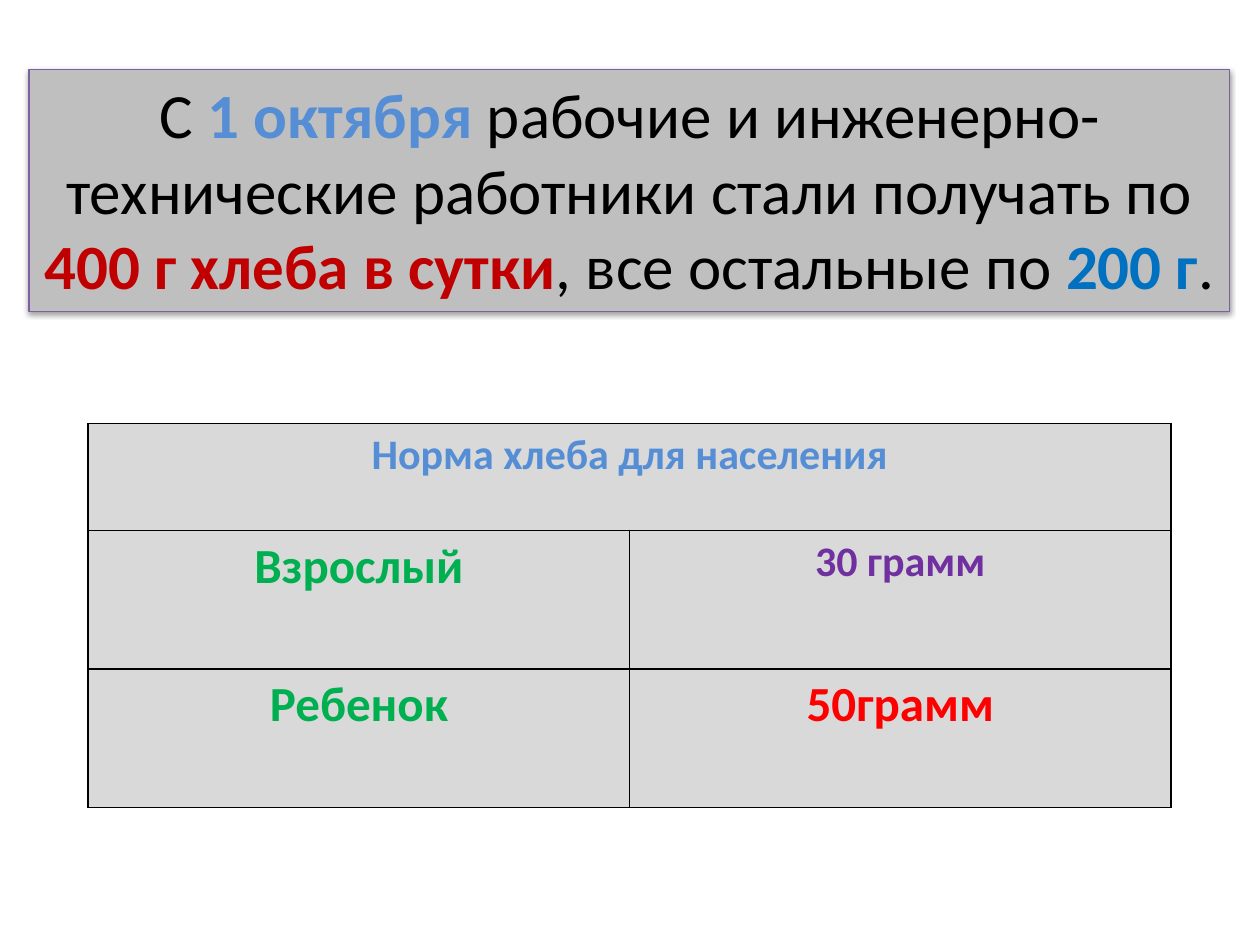
from lxml.etree import SubElement
from pptx import Presentation
from pptx.dml.color import RGBColor
from pptx.enum.shapes import MSO_SHAPE
from pptx.enum.text import MSO_ANCHOR, MSO_AUTO_SIZE, PP_ALIGN
from pptx.oxml import parse_xml
from pptx.oxml.ns import nsdecls, qn
from pptx.util import Pt

FONT = "Calibri"
COLORS = {
    "black": "000000", "panel": "BFBFBF", "panel_line": "7D60A0",
    "cell": "D9D9D9", "sky": "558ED5", "dark_red": "C00000",
    "blue": "0070C0", "green": "00B050", "purple": "7030A0", "red": "FF0000",
}

STATEMENT = [
    ("С ", "black", False),
    ("1 октября ", "sky", True),
    ("рабочие и инженерно-технические работники стали получать по ", "black", False),
    ("400 г хлеба в сутки", "dark_red", True),
    (", все остальные по ", "black", False),
    ("200 г", "blue", True),
    (".", "black", False),
]
STATEMENT_BOX = (16.56, 39.6, 686.16, 138.24)

RATIONS = [
    [("Норма хлеба для населения", 24, "sky"), None],
    [("Взрослый", 28, "green"), ("30 грамм", 24, "purple")],
    [("Ребенок", 28, "green"), ("50грамм", 28, "red")],
]
TABLE_LEFT, TABLE_TOP, COLUMN_WIDTH = 50.4, 241.9, 309.4
ROW_HEIGHTS = [61.2, 79.2, 79.2]


def color(name):
    return RGBColor.from_string(COLORS[name])


def style_font(font, size, color_name, bold):
    font.name = FONT
    font.size = Pt(size)
    font.bold = bold
    font.color.rgb = color(color_name)


def add_shadow(shape):
    shape.shadow.inherit = False
    effects = shape._element.spPr.find(qn("a:effectLst"))
    shadow = SubElement(effects, qn("a:outerShdw"), blurRad=str(Pt(3.1)),
                        dist=str(Pt(1.6)), dir="5400000", rotWithShape="0")
    shade = SubElement(shadow, qn("a:srgbClr"), val=COLORS["black"])
    SubElement(shade, qn("a:alpha"), val="38000")


def add_borders(cell):
    properties = cell._tc.get_or_add_tcPr()
    for index, side in enumerate(("lnL", "lnR", "lnT", "lnB")):
        properties.insert(index, parse_xml(
            f'<a:{side} {nsdecls("a")} w="{Pt(1)}"><a:solidFill>'
            f'<a:srgbClr val="{COLORS["black"]}"/></a:solidFill></a:{side}>'))


def add_statement(slide):
    shape = slide.shapes.add_shape(MSO_SHAPE.RECTANGLE, *map(Pt, STATEMENT_BOX))
    shape.fill.solid()
    shape.fill.fore_color.rgb = color("panel")
    shape.line.color.rgb = color("panel_line")
    shape.line.width = Pt(0.75)
    add_shadow(shape)
    text_frame = shape.text_frame
    text_frame.word_wrap = True
    text_frame.auto_size = MSO_AUTO_SIZE.SHAPE_TO_FIT_TEXT
    text_frame.vertical_anchor = MSO_ANCHOR.TOP
    paragraph = text_frame.paragraphs[0]
    paragraph.alignment = PP_ALIGN.CENTER
    for text, color_name, bold in STATEMENT:
        run = paragraph.add_run()
        run.text = text
        style_font(run.font, 36, color_name, bold)


def add_rations(slide):
    columns = len(RATIONS[0])
    table = slide.shapes.add_table(
        len(RATIONS), columns, Pt(TABLE_LEFT), Pt(TABLE_TOP),
        Pt(COLUMN_WIDTH * columns), Pt(sum(ROW_HEIGHTS))).table
    for column in table.columns:
        column.width = Pt(COLUMN_WIDTH)
    for row, height in zip(table.rows, ROW_HEIGHTS):
        row.height = Pt(height)
    table.cell(0, 0).merge(table.cell(0, columns - 1))
    for row, entries in zip(table.rows, RATIONS):
        for cell, entry in zip(row.cells, entries):
            cell.fill.solid()
            cell.fill.fore_color.rgb = color("cell")
            add_borders(cell)
            if entry:
                text, size, color_name = entry
                cell.text_frame.text = text
                paragraph = cell.text_frame.paragraphs[0]
                paragraph.alignment = PP_ALIGN.CENTER
                style_font(paragraph.runs[0].font, size, color_name, True)


def main():
    presentation = Presentation()
    presentation.slide_width, presentation.slide_height = Pt(720), Pt(540)
    slide = presentation.slides.add_slide(presentation.slide_layouts[6])
    add_statement(slide)
    add_rations(slide)
    presentation.save("out.pptx")


if __name__ == "__main__":
    main()
